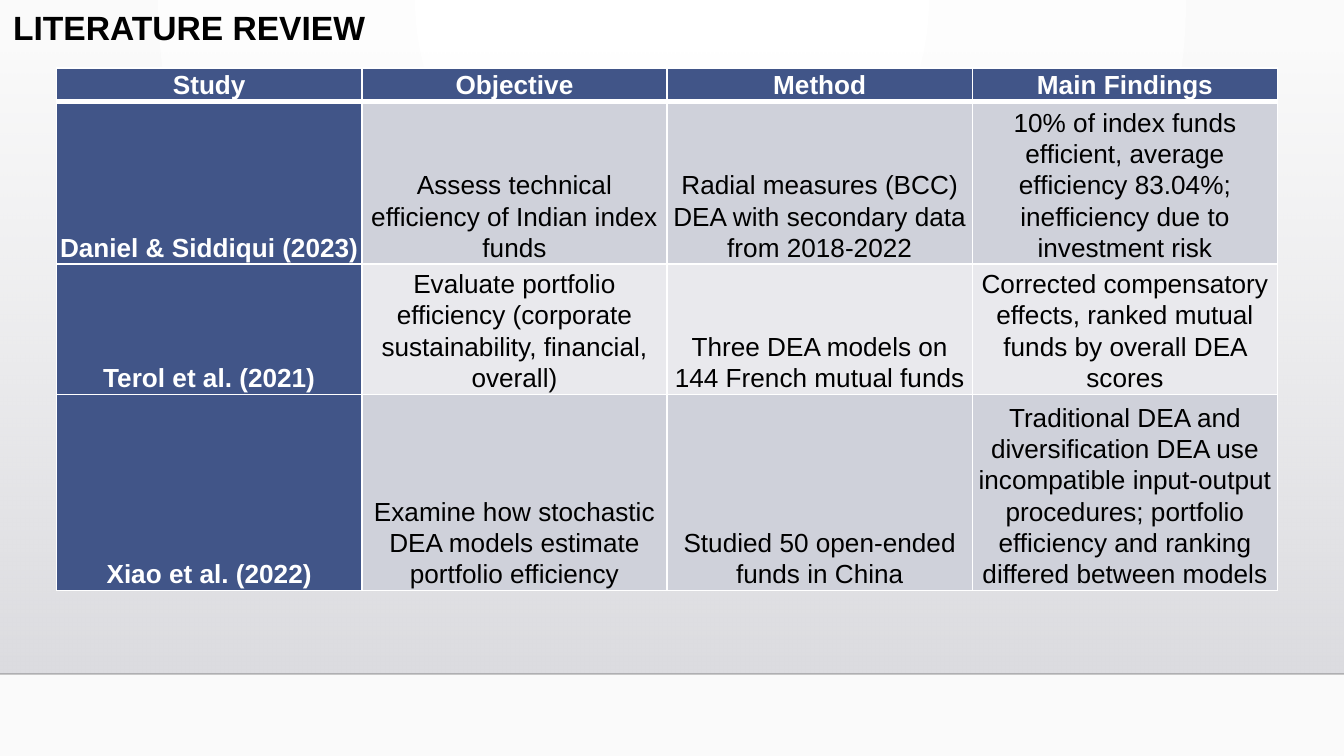
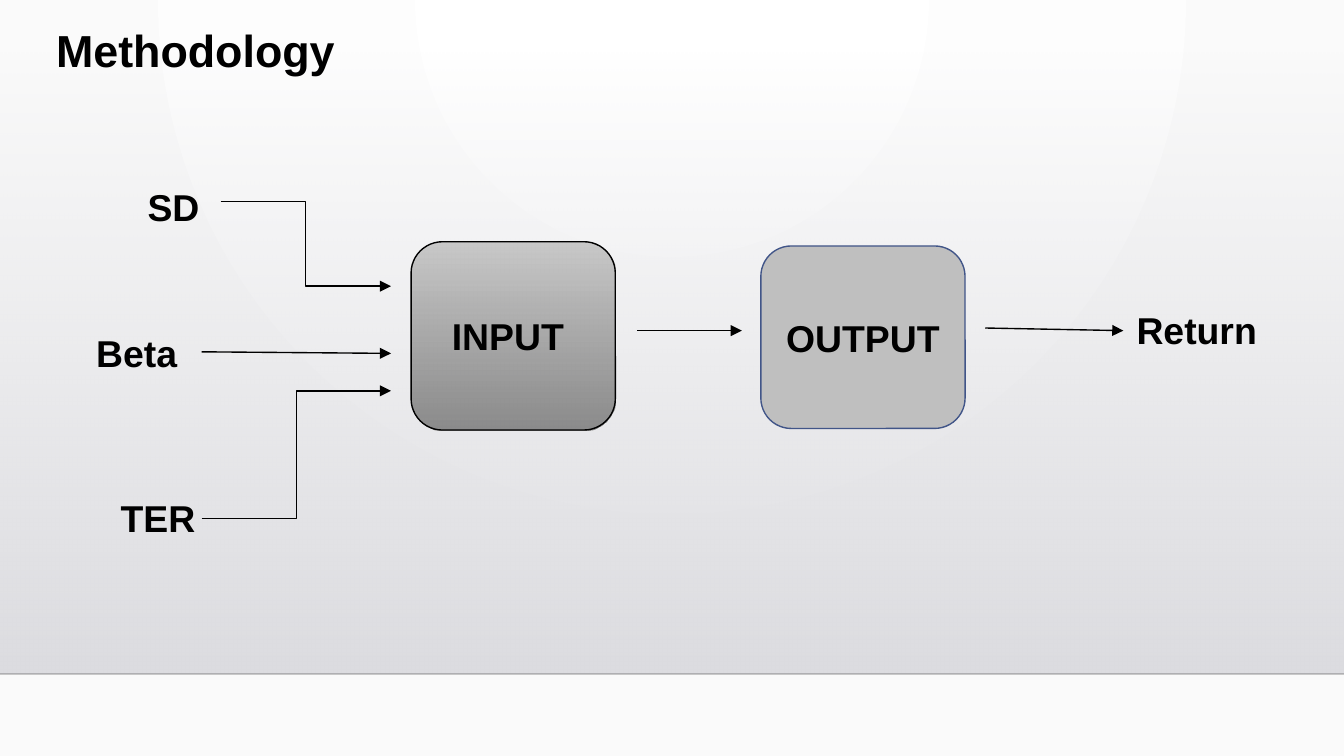
from dataclasses import dataclass

from lxml.etree import SubElement
from pptx import Presentation
from pptx.dml.color import RGBColor
from pptx.enum.shapes import MSO_CONNECTOR as Connector, MSO_SHAPE as Preset
from pptx.enum.text import MSO_ANCHOR as Anchor, PP_ALIGN as Align
from pptx.oxml import parse_xml
from pptx.oxml.ns import nsdecls, qn
from pptx.util import Cm, Pt


@dataclass(frozen=True)
class Theme:
    font: str = "Arial"
    ink: str = "000000"
    white: str = "FFFFFF"
    page_edge: str = "FAFAFA"
    band_top: str = "DCDCE0"
    band_bottom: str = "DEDEE2"
    navy: str = "415588"
    row_dark: str = "CFD1DA"
    row_light: str = "E9E9ED"
    box_top: str = "C8C8C8"
    box_bottom: str = "848484"
    box_grey: str = "BFBFBF"
    title_small: int = 18
    title_large: int = 24
    label: int = 20
    cell: int = 14


THEME = Theme()
WIDTH, HEIGHT = 25.4, 14.29
BAND_TOP, BAND_BOTTOM = 0.97, 12.74

REVIEW_TITLE = "LITERATURE REVIEW"
REVIEW_ROWS = [
    ("Study", "Objective", "Method", "Main Findings"),
    ("Daniel & Siddiqui (2023)",
     "Assess technical efficiency of Indian index funds",
     "Radial measures (BCC) DEA with secondary data from 2018-2022",
     "10% of index funds efficient, average efficiency 83.04%; "
     "inefficiency due to investment risk"),
    ("Terol et al. (2021)",
     "Evaluate portfolio efficiency (corporate sustainability, financial, overall)",
     "Three DEA models on 144 French mutual funds",
     "Corrected compensatory effects, ranked mutual funds by overall DEA scores"),
    ("Xiao et al. (2022)",
     "Examine how stochastic DEA models estimate portfolio efficiency",
     "Studied 50 open-ended funds in China",
     "Traditional DEA and diversification DEA use incompatible input-output "
     "procedures; portfolio efficiency and ranking differed between models"),
]
ROW_HEIGHTS = [0.61, 3.08, 2.46, 3.71]
COLUMN_WIDTH = 5.77

METHOD_TITLE = "Methodology"
LABELS = [
    ("SD", (2.54, 3.35, 1.5, 1.96), Anchor.TOP),
    ("Beta", (1.57, 6.1, 2.24, 1.14), Anchor.MIDDLE),
    ("TER", (2.03, 8.71, 2.51, 2.16), Anchor.MIDDLE),
    ("Return", (21.23, 5.69, 2.79, 1.12), Anchor.TOP),
]
ARROWS = [
    (Connector.ELBOW, (4.17, 3.81, 7.39, 5.41)),
    (Connector.STRAIGHT, (3.81, 6.65, 7.39, 6.68)),
    (Connector.ELBOW, (3.81, 9.8, 7.39, 7.39)),
    (Connector.STRAIGHT, (12.04, 6.25, 14.02, 6.25)),
    (Connector.STRAIGHT, (18.62, 6.2, 21.23, 6.25)),
]
BOXES = [
    ("INPUT ", (7.77, 4.57, 3.86, 3.56), THEME.ink),
    ("OUTPUT", (14.38, 4.65, 3.86, 3.45), THEME.navy),
]
LINEAR = '<a:lin ang="5400000" scaled="0"/>'
RADIAL = ('<a:path path="circle"><a:fillToRect l="43000" t="0" '
          'r="43000" b="100000"/></a:path>')


def color(value):
    return RGBColor.from_string(value)


def lengths(values):
    return [Cm(value) for value in values]


def set_gradient(holder, start, end, direction):
    stops = "".join(
        f'<a:gs pos="{position}"><a:srgbClr val="{value}">'
        f'<a:alpha val="{opacity * 1000}"/></a:srgbClr></a:gs>'
        for position, (value, opacity) in ((0, start), (100000, end)))
    gradient = parse_xml(f'<a:gradFill {nsdecls("a")} rotWithShape="1">'
                         f'<a:gsLst>{stops}</a:gsLst>{direction}</a:gradFill>')
    holder.replace(holder.find(qn("a:solidFill")), gradient)


def write(frame, text, size, ink=THEME.ink, bold=True, align=Align.LEFT, spacing=None):
    frame.word_wrap = True
    paragraph = frame.paragraphs[0]
    paragraph.text = text
    paragraph.alignment = align
    if spacing:
        paragraph.line_spacing = spacing
    paragraph.font.name = THEME.font
    paragraph.font.size = Pt(size)
    paragraph.font.bold = bold
    paragraph.font.color.rgb = color(ink)


def add_text(slide, text, place, size, anchor=Anchor.TOP, spacing=None):
    frame = slide.shapes.add_textbox(*lengths(place)).text_frame
    frame.vertical_anchor = anchor
    write(frame, text, size, spacing=spacing)


def add_box(slide, preset, place, fill):
    shape = slide.shapes.add_shape(preset, *lengths(place))
    shape.shadow.inherit = False
    shape.fill.solid()
    shape.fill.fore_color.rgb = color(fill)
    shape.line.fill.background()
    return shape


def add_line(slide, kind, ends, width):
    connector = slide.shapes.add_connector(kind, *lengths(ends))
    connector.line.color.rgb = color(THEME.ink)
    connector.line.width = Pt(width)
    SubElement(connector.element.spPr, qn("a:effectLst"))
    return connector


def set_background(master):
    master.background.fill.solid()
    set_gradient(master.element.find(".//" + qn("p:bgPr")),
                 (THEME.white, 100), (THEME.page_edge, 100), RADIAL)


def add_slide(presentation):
    slide = presentation.slides.add_slide(presentation.slide_layouts[6])
    band = add_box(slide, Preset.RECTANGLE,
                   (0, BAND_TOP, WIDTH, BAND_BOTTOM - BAND_TOP), THEME.band_top)
    set_gradient(band.element.spPr, (THEME.band_top, 0),
                 (THEME.band_bottom, 100), LINEAR)
    rule = add_line(slide, Connector.STRAIGHT,
                    (0, BAND_BOTTOM, WIDTH, BAND_BOTTOM), 1)
    ink = rule.line._get_or_add_ln().find(".//" + qn("a:srgbClr"))
    SubElement(ink, qn("a:alpha"), val="20000")
    return slide


def set_borders(cell, top, bottom):
    properties = cell._tc.get_or_add_tcPr()
    sides = (("lnL", 1), ("lnR", 1), ("lnT", top), ("lnB", bottom))
    for index, (side, width) in enumerate(sides):
        properties.insert(index, parse_xml(
            f'<a:{side} {nsdecls("a")} w="{Pt(width)}"><a:solidFill>'
            f'<a:srgbClr val="{THEME.white}"/></a:solidFill></a:{side}>'))


def fill_cell(cell, text, row, column):
    heading = row == 0 or column == 0
    body_fill = THEME.row_dark if row % 2 else THEME.row_light
    cell.fill.solid()
    cell.fill.fore_color.rgb = color(THEME.navy if heading else body_fill)
    cell.vertical_anchor = Anchor.BOTTOM
    cell.margin_left = cell.margin_right = Cm(0.02)
    cell.margin_top = cell.margin_bottom = Cm(0.02)
    write(cell.text_frame, text, THEME.cell, THEME.white if heading else THEME.ink,
          heading, Align.CENTER, 1.07)
    cell.text_frame.paragraphs[0].space_after = Pt(8)
    set_borders(cell, 3 if row == 1 else 1, 3 if row == 0 else 1)


def build_review(presentation):
    slide = add_slide(presentation)
    columns = len(REVIEW_ROWS[0])
    place = (1.07, 1.28, COLUMN_WIDTH * columns, sum(ROW_HEIGHTS))
    table = slide.shapes.add_table(len(REVIEW_ROWS), columns, *lengths(place)).table
    table.horz_banding = False
    for column in table.columns:
        column.width = Cm(COLUMN_WIDTH)
    for row, (texts, height) in enumerate(zip(REVIEW_ROWS, ROW_HEIGHTS)):
        table.rows[row].height = Cm(height)
        for column, text in enumerate(texts):
            fill_cell(table.cell(row, column), text, row, column)
    add_text(slide, REVIEW_TITLE, (0, 0, 10.67, 1.02), THEME.title_small)


def build_methodology(presentation):
    slide = add_slide(presentation)
    add_text(slide, METHOD_TITLE, (0.81, -0.08, 7.9, 2.16), THEME.title_large,
             Anchor.MIDDLE, 0.9)
    for text, place, anchor in LABELS:
        add_text(slide, text, place, THEME.label, anchor)
    for kind, ends in ARROWS:
        arrow = add_line(slide, kind, ends, 0.75)
        SubElement(arrow.line._get_or_add_ln(), qn("a:tailEnd"), type="triangle")
    shapes = []
    for text, place, outline in BOXES:
        shape = add_box(slide, Preset.ROUNDED_RECTANGLE, place, THEME.box_grey)
        shape.line.color.rgb = color(outline)
        shape.line.width = Pt(0.75)
        shape.text_frame.vertical_anchor = Anchor.MIDDLE
        write(shape.text_frame, text, THEME.label, align=Align.CENTER)
        shapes.append(shape)
    set_gradient(shapes[0].element.spPr, (THEME.box_top, 100),
                 (THEME.box_bottom, 92), LINEAR)


def main():
    presentation = Presentation()
    presentation.slide_width, presentation.slide_height = lengths((WIDTH, HEIGHT))
    set_background(presentation.slide_master)
    build_review(presentation)
    build_methodology(presentation)
    presentation.save("out.pptx")


if __name__ == "__main__":
    main()
